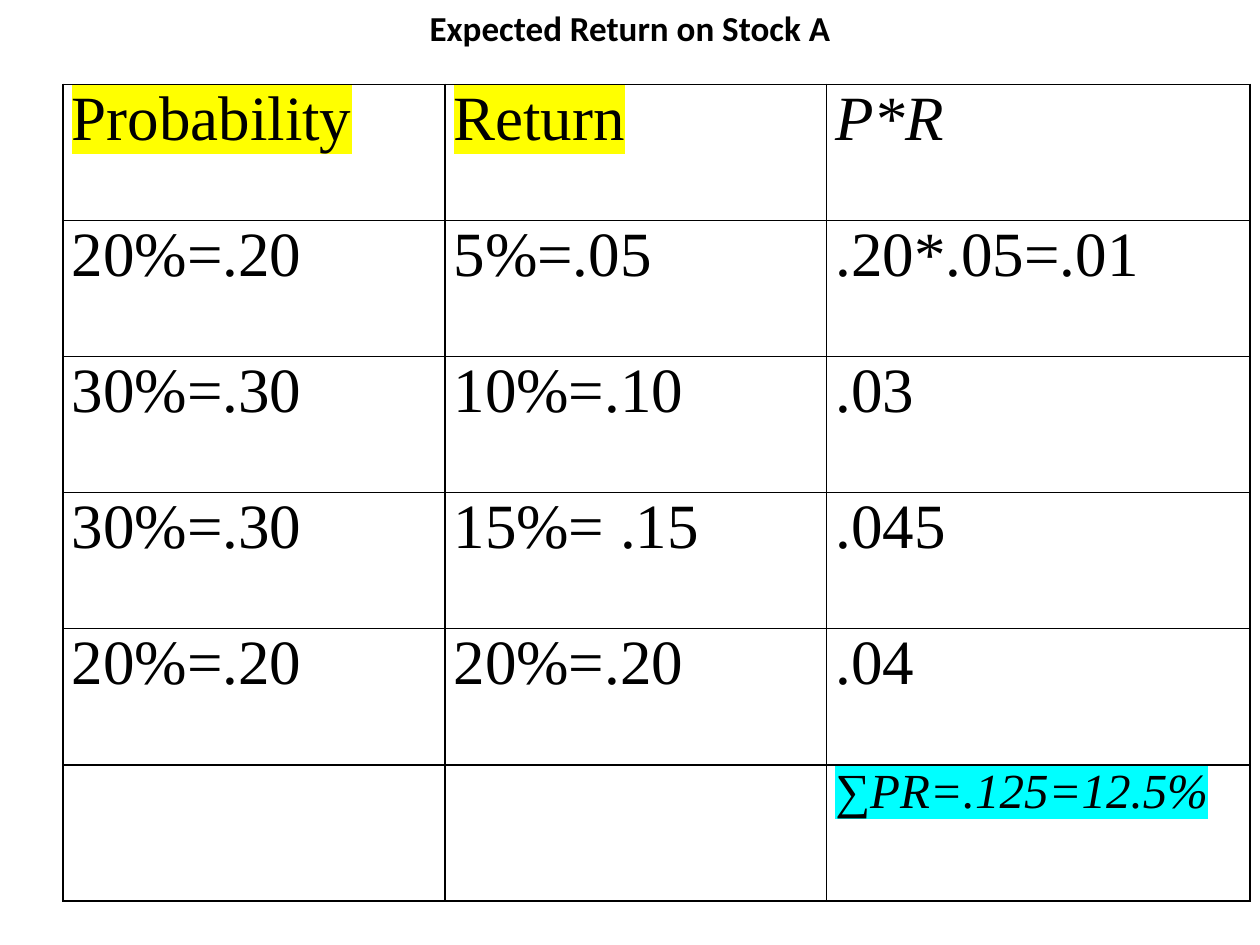
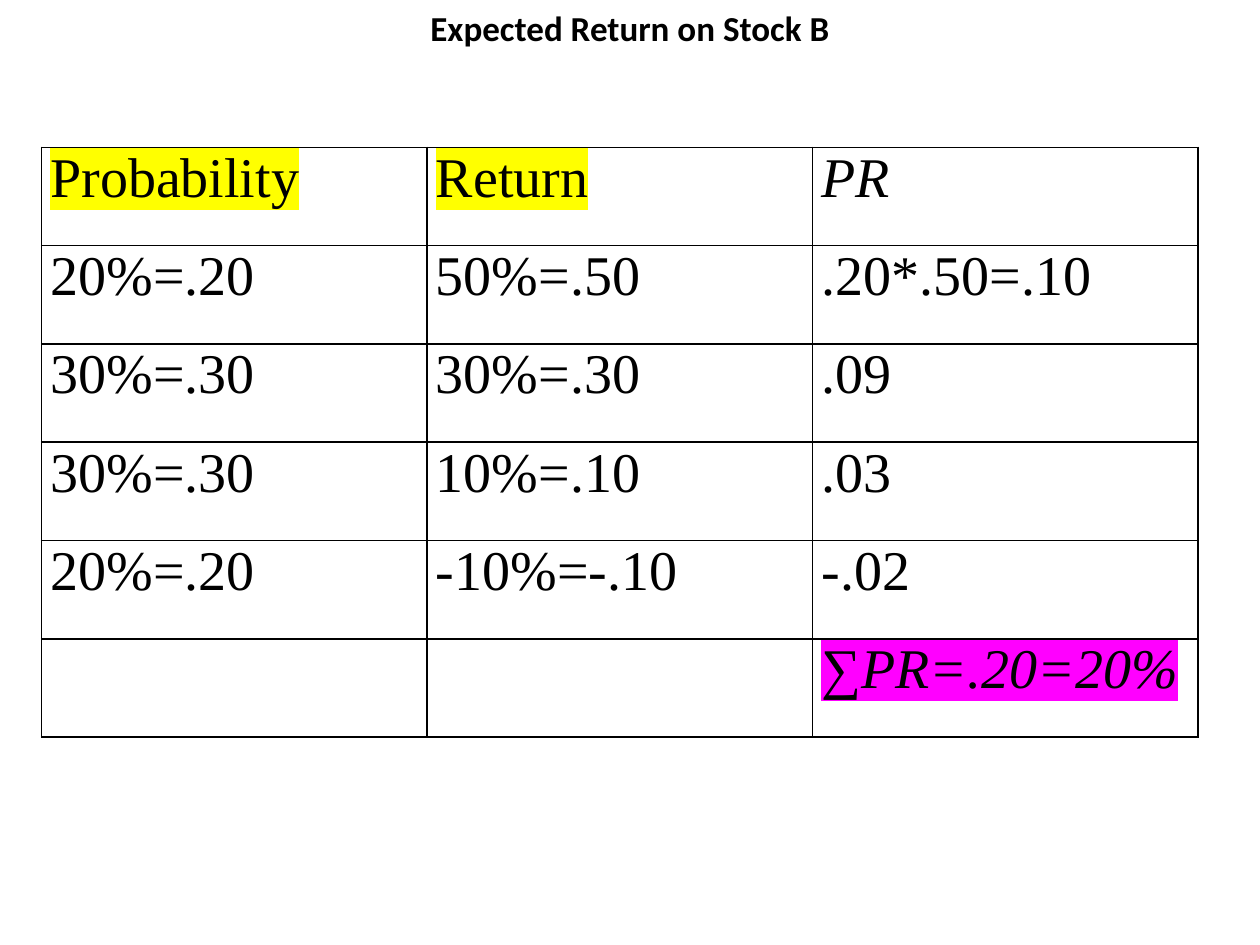
from dataclasses import dataclass

from lxml import etree
from pptx import Presentation
from pptx import util as u
from pptx.dml.color import RGBColor
from pptx.enum import text
from pptx.oxml import ns


@dataclass(frozen=True)
class Theme:
    ink: str = "000000"
    header_mark: str = "FFFF00"
    title_font: str = "Calibri"
    table_font: str = "Times New Roman"
    title_size: int = 20
    border_width: int = 1
    cell_inset: float = 0.07


THEME = Theme()
TITLE_ONLY = 5

STOCK_A = [
    ("Probability", "Return", "P*R"),
    ("20%=.20", "5%=.05", ".20*.05=.01"),
    ("30%=.30", "10%=.10", ".03"),
    ("30%=.30", "15%= .15", ".045"),
    ("20%=.20", "20%=.20", ".04"),
    ("", "", "∑PR=.125=12.5%"),
]
STOCK_B = [
    ("Probability", "Return", "PR"),
    ("20%=.20", "50%=.50", ".20*.50=.10"),
    ("30%=.30", "30%=.30", ".09"),
    ("30%=.30", "10%=.10", ".03"),
    ("20%=.20", "-10%=-.10", "-.02"),
    ("", "", "∑PR=.20=20%"),
]


def add_color(parent, tag, color):
    """Add an element such as a:highlight that holds one RGB colour."""
    el = etree.SubElement(parent, ns.qn(tag))
    etree.SubElement(el, ns.qn("a:srgbClr"), val=color)


def style_font(font, name, size):
    font.name, font.size = name, u.Pt(size)
    font.color.rgb = RGBColor.from_string(THEME.ink)


def add_title(s, title):
    sp = s.shapes.title
    sp.left, sp.top = u.Inches(0), u.Inches(0)
    sp.width, sp.height = u.Inches(10), u.Inches(0.44)
    tf = sp.text_frame
    tf.text = title
    tf.auto_size = text.MSO_AUTO_SIZE.SHAPE_TO_FIT_TEXT
    tf.vertical_anchor = text.MSO_ANCHOR.MIDDLE
    p = tf.paragraphs[0]
    p.alignment = text.PP_ALIGN.CENTER
    style_font(p.font, THEME.title_font, THEME.title_size)
    p.font.bold = True


def style_cell(cell):
    cell.margin_left = cell.margin_right = u.Inches(THEME.cell_inset)
    cell.margin_top = cell.margin_bottom = 0
    # Borders come before the fill in the cell properties
    tc_pr = cell._tc.get_or_add_tcPr()
    for side in "LRTB":
        ln = etree.SubElement(tc_pr, ns.qn(f"a:ln{side}"),
                              w=str(u.Pt(THEME.border_width)))
        add_color(ln, "a:solidFill", THEME.ink)
    cell.fill.background()


def write_cell(cell, value, size, italic, mark):
    p = cell.text_frame.paragraphs[0]
    p.alignment = text.PP_ALIGN.JUSTIFY
    style_font(p.font, THEME.table_font, size)
    p.font.italic = italic
    r = p.add_run()
    r.text = value
    if mark:
        add_color(r._r.get_or_add_rPr(), "a:highlight", mark)


def add_return_table(s, rows, left, top, col_widths, row_height,
                     size, sum_size, sum_mark):
    frame = s.shapes.add_table(
        len(rows), len(col_widths), u.Inches(left), u.Inches(top),
        u.Inches(sum(col_widths)), u.Inches(row_height * len(rows)))
    table = frame.table
    table.first_row = table.horz_banding = False
    for column, width in zip(table.columns, col_widths):
        column.width = u.Inches(width)

    last_row, product_col = len(rows) - 1, len(col_widths) - 1
    for i, values in enumerate(rows):
        table.rows[i].height = u.Inches(row_height)
        for j, value in enumerate(values):
            cell = table.cell(i, j)
            style_cell(cell)
            if not value:
                continue
            is_sum = i == last_row
            is_input_header = i == 0 and j < product_col
            mark = (sum_mark if is_sum
                    else THEME.header_mark if is_input_header else None)
            italic = j == product_col and i in (0, last_row)
            write_cell(cell, value, sum_size if is_sum else size, italic, mark)


def add_stock_slide(prs, title, rows, **layout):
    s = prs.slides.add_slide(prs.slide_layouts[TITLE_ONLY])
    add_title(s, title)
    add_return_table(s, rows, **layout)


def main():
    prs = Presentation()
    prs.slide_width, prs.slide_height = u.Inches(10), u.Inches(7.5)

    # Stock A
    add_stock_slide(prs, "Expected Return on Stock A", STOCK_A,
                    left=0.5, top=0.67, col_widths=(3.03, 3.03, 3.36),
                    row_height=1.08, size=36, sum_size=28, sum_mark="00FFFF")
    # Stock B
    add_stock_slide(prs, "Expected Return on Stock B", STOCK_B,
                    left=0.33, top=1.17, col_widths=(3.06, 3.06, 3.06),
                    row_height=0.78, size=32, sum_size=32, sum_mark="FF00FF")

    prs.save("out.pptx")


if __name__ == "__main__":
    main()
